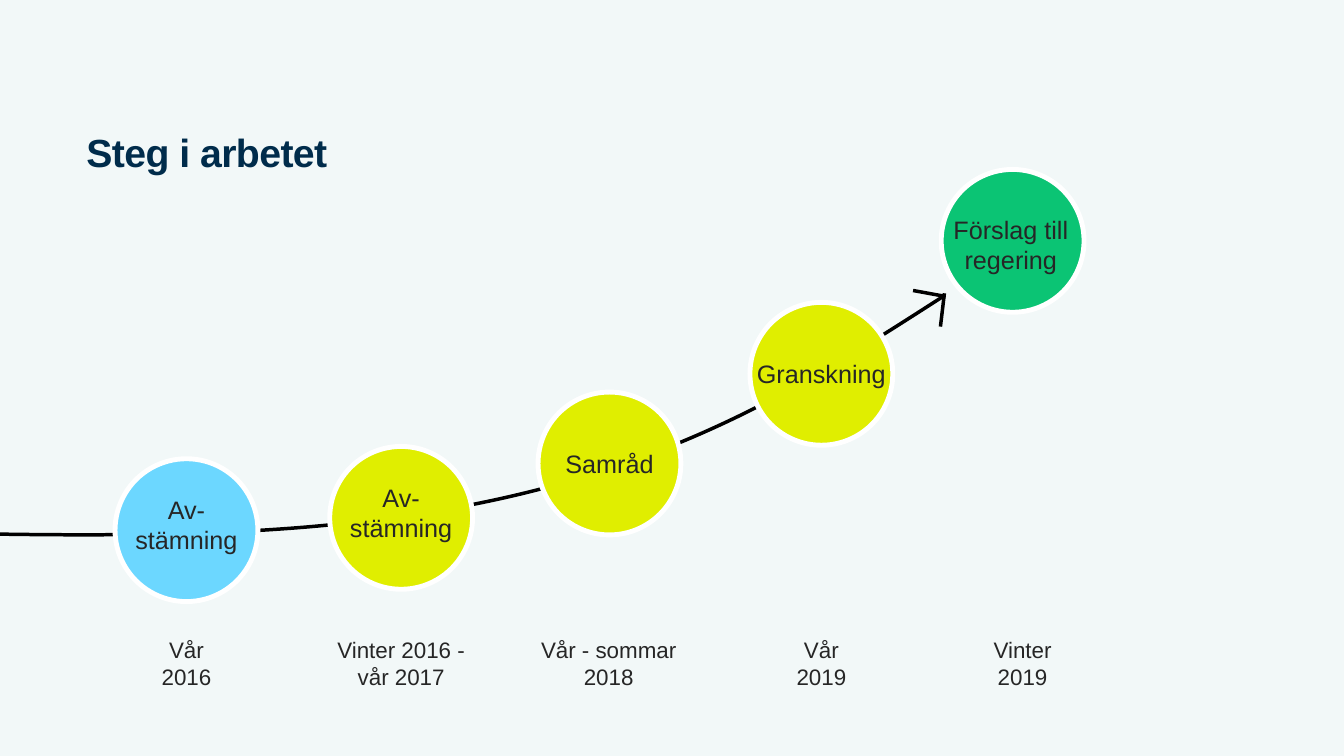
from lxml.etree import SubElement
from pptx import Presentation
from pptx.dml.color import RGBColor
from pptx.enum.shapes import MSO_CONNECTOR, MSO_SHAPE
from pptx.enum.text import MSO_ANCHOR, PP_ALIGN
from pptx.oxml.ns import qn
from pptx.util import Cm, Pt

COLORS = {
    "background": "F2F8F8",
    "title": "002C4B",
    "text": "262626",
    "path": "000000",
    "outline": "FFFFFF",
    "start": "6CD7FF",
    "step": "E0EE00",
    "goal": "0BC474",
}
DIAMETER = 3.6
LABEL_TOP, LABEL_WIDTH, LABEL_HEIGHT = 15.9, 4.7, 1.63

# Left, top, colour, text and bottom inset of each circle
STEPS = [
    (2.9, 11.56, "start", "Av-\nstämning", 0.28),
    (8.31, 11.25, "step", "Av-\nstämning", 0.28),
    (13.56, 9.88, "step", "Samråd", 0),
    (18.9, 7.62, "step", "Granskning", 0),
    (23.72, 4.27, "goal", "", 0),
]
# Centre and text of each date
DATES = [
    (4.7, "Vår\n2016"),
    (10.11, "Vinter 2016 -\nvår 2017"),
    (15.34, "Vår - sommar\n2018"),
    (20.7, "Vår\n2019"),
    (25.77, "Vinter\n2019"),
]
# Start point, then two control points and an end point per curve
CURVE = [
    (23.77, 7.47),
    (19.94, 9.93), (16.1, 12.42), (8.76, 13.18),
    (6.25, 13.46), (3.3, 13.51), (0, 13.46),
]
ARROWHEAD = [(23.7, 8.23, 23.8, 7.39), (23.01, 7.32, 23.83, 7.47)]


def color(name):
    return RGBColor.from_string(COLORS[name])


def set_text(shape, text, size, align=PP_ALIGN.CENTER, color_name="text", bold=False):
    paragraph = shape.text_frame.paragraphs[0]
    paragraph.text = text
    paragraph.alignment = align
    font = paragraph.font
    font.name, font.size, font.bold = "Arial", Pt(size), bold
    font.color.rgb = color(color_name)
    return paragraph


def style_line(line, color_name, width):
    line.color.rgb = color(color_name)
    line.width = Pt(width)


def add_text(slide, left, top, width, height, text, size, **style):
    box = slide.shapes.add_textbox(Cm(left), Cm(top), Cm(width), Cm(height))
    box.text_frame.word_wrap = True
    return box, set_text(box, text, size, **style)


def add_curve(slide, points):
    start, *rest = [(Cm(x), Cm(y)) for x, y in points]
    builder = slide.shapes.build_freeform(*start)
    builder.add_line_segments(rest, close=False)
    shape = builder.convert_to_shape()
    shape.shadow.inherit = False
    shape.fill.background()
    style_line(shape.line, "path", 2.5)
    # Join each three segments into one Bézier curve
    outline = next(shape.element.iter(qn("a:path")))
    segments = outline.findall(qn("a:lnTo"))
    for first in range(0, len(segments), 3):
        bezier = SubElement(outline, qn("a:cubicBezTo"))
        for segment in segments[first:first + 3]:
            bezier.append(segment[0])
            outline.remove(segment)


def add_line(slide, *ends):
    connector = slide.shapes.add_connector(
        MSO_CONNECTOR.STRAIGHT, *[Cm(end) for end in ends])
    style_line(connector.line, "path", 2.5)
    SubElement(connector.element.spPr, qn("a:effectLst"))


def add_circle(slide, left, top, color_name, text, bottom_inset):
    circle = slide.shapes.add_shape(
        MSO_SHAPE.OVAL, Cm(left), Cm(top), Cm(DIAMETER), Cm(DIAMETER))
    circle.shadow.inherit = False
    circle.fill.solid()
    circle.fill.fore_color.rgb = color(color_name)
    style_line(circle.line, "outline", 3.5)
    if text:
        frame = circle.text_frame
        frame.word_wrap = False
        frame.vertical_anchor = MSO_ANCHOR.MIDDLE
        frame.margin_left = frame.margin_right = frame.margin_top = 0
        frame.margin_bottom = Cm(bottom_inset)
        set_text(circle, text, 18)


def main():
    presentation = Presentation()
    presentation.slide_width, presentation.slide_height = Cm(33.87), Cm(19.05)
    slide = presentation.slides.add_slide(presentation.slide_layouts[6])
    slide.background.fill.solid()
    slide.background.fill.fore_color.rgb = color("background")

    # Rising path with its open arrowhead
    add_curve(slide, CURVE)
    for ends in ARROWHEAD:
        add_line(slide, *ends)

    # Steps along the path
    for step in STEPS:
        add_circle(slide, *step)
    add_text(slide, 23.29, 5.28, 4.37, 1.8, "Förslag till regering", 18)

    # Dates below the steps
    for center, text in DATES:
        add_text(slide, center - LABEL_WIDTH / 2, LABEL_TOP,
                 LABEL_WIDTH, LABEL_HEIGHT, text, 16)

    # Title
    title, paragraph = add_text(
        slide, 1.93, 1.45, 23.52, 3.1, "Steg i arbetet", 28,
        align=PP_ALIGN.LEFT, color_name="title", bold=True)
    title.text_frame.vertical_anchor = MSO_ANCHOR.BOTTOM
    paragraph.line_spacing = 0.9
    paragraph.runs[0].font._element.set("spc", "-40")

    presentation.save("out.pptx")


if __name__ == "__main__":
    main()
